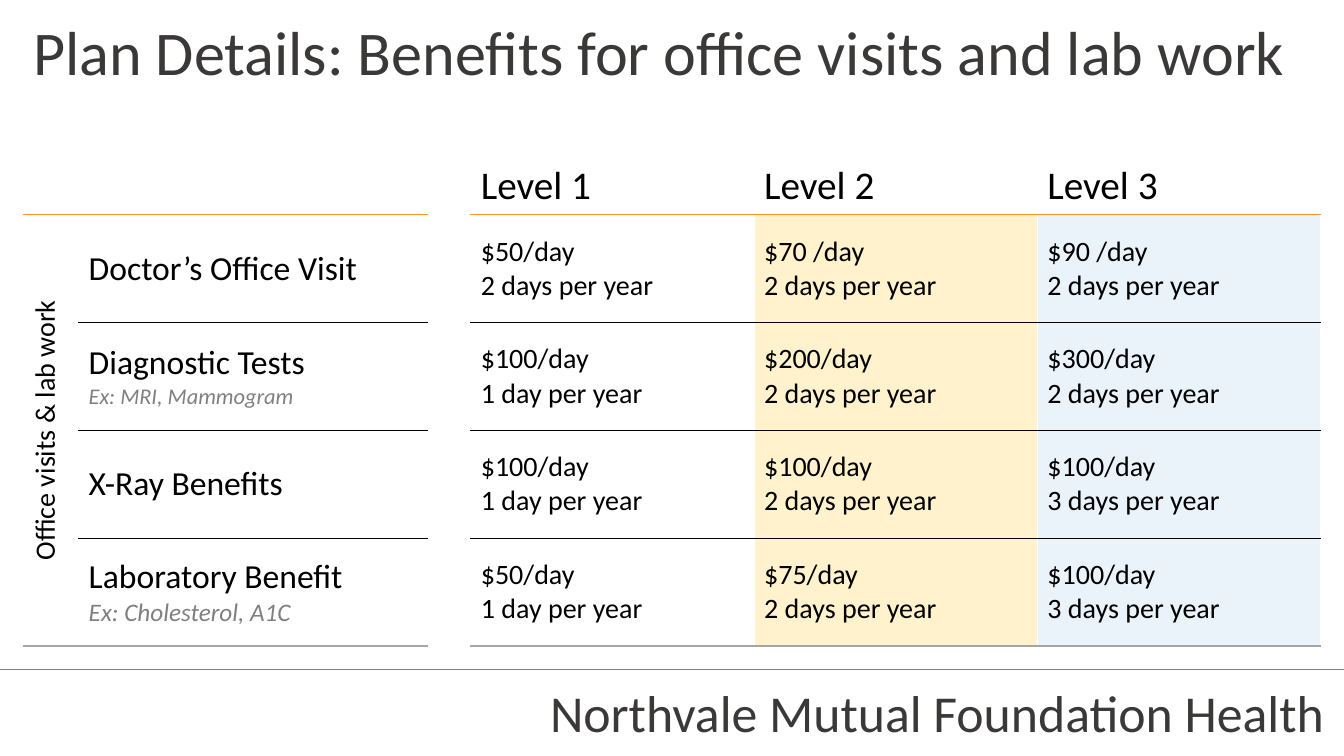
"""Build the plan details slide with the benefits table for three levels."""
import pptx
import pptx.dml.color
import pptx.enum.shapes
import pptx.enum.text
import pptx.oxml
import pptx.oxml.ns
import pptx.util

Inches = pptx.util.Inches
Pt = pptx.util.Pt
Anchor = pptx.enum.text.MSO_ANCHOR
Align = pptx.enum.text.PP_ALIGN

THEME = {
    "font": "Calibri",
    "heading": "3B3838", "ink": "000000", "muted": "808080",
    "white": "FFFFFF", "amber": "F8981D", "closing": "A6A6A6",
    "level_fills": ["FFFFFF", "FFF2CC", "EAF2FA"],
    "title": 44.4, "footer": 37, "level": 28, "benefit": 24, "body": 20,
}
WIDTH, HEIGHT = 13.33, 7.5
MARGIN = 0.23
COLUMNS = [0.55, 3.47, 0.42, 2.81, 2.81, 2.81]
ROWS = [1] + [1.07] * 4
GAP_COLUMN, FIRST_LEVEL = 2, 3

LEVELS = ["Level 1", "Level 2", "Level 3"]
BENEFITS = [
    ("Doctor’s Office Visit", None, 0,
     [("$50/day", "2 days per year"), ("$70 /day", "2 days per year"), ("$90 /day", "2 days per year")]),
    ("Diagnostic Tests", "Ex: MRI, Mammogram", 16,
     [("$100/day", "1 day per year"), ("$200/day", "2 days per year"), ("$300/day", "2 days per year")]),
    ("X-Ray Benefits", None, 0,
     [("$100/day", "1 day per year"), ("$100/day", "2 days per year"), ("$100/day", "3 days per year")]),
    ("Laboratory Benefit", "Ex: Cholesterol, A1C", 18,
     [("$50/day", "1 day per year"), ("$75/day", "2 days per year"), ("$100/day", "3 days per year")]),
]


def write(frame, lines, anchor=Anchor.MIDDLE, align=Align.LEFT):
    """Write (text, size, color, italic) lines as the paragraphs of a frame."""
    frame.word_wrap = True
    frame.vertical_anchor = anchor
    for index, (text, size, color, italic) in enumerate(lines):
        para = frame.add_paragraph() if index else frame.paragraphs[0]
        para.alignment = align
        span = para.add_run()
        span.text = text
        span.font.name = THEME["font"]
        span.font.size = Pt(size)
        span.font.italic = italic
        span.font.color.rgb = pptx.dml.color.RGBColor.from_string(color)


def add_border(cell, side, color):
    """Draw one side of a table cell as a solid one-point line."""
    cell._tc.get_or_add_tcPr().append(pptx.oxml.parse_xml(
        f'<a:ln{side} {pptx.oxml.ns.nsdecls("a")} w="12700"><a:solidFill>'
        f'<a:srgbClr val="{color}"/></a:solidFill></a:ln{side}>'))


deck = pptx.Presentation()
deck.slide_width, deck.slide_height = Inches(WIDTH), Inches(HEIGHT)
page = deck.slides.add_slide(deck.slide_layouts[6])

rule = page.shapes.add_connector(
    pptx.enum.shapes.MSO_CONNECTOR.STRAIGHT, 0, Inches(6.64), Inches(WIDTH), Inches(6.64))
rule.line.width = Pt(0.5)
rule.line.color.rgb = pptx.dml.color.RGBColor.from_string(THEME["muted"])
rule._element.spPr.append(pptx.oxml.parse_xml(f'<a:effectLst {pptx.oxml.ns.nsdecls("a")}/>'))

for text, size, left, top, width, align in [
    ("Northvale Mutual Foundation Health", THEME["footer"], 5.35, 6.44, 7.88, Align.RIGHT),
    ("Plan Details: Benefits for office visits and lab work", THEME["title"],
     MARGIN, -0.12, sum(COLUMNS), Align.LEFT),
]:
    box = page.shapes.add_textbox(Inches(left), Inches(top), Inches(width), Inches(1.25))
    write(box.text_frame, [(text, size, THEME["heading"], False)], align=align)

table = page.shapes.add_table(
    len(ROWS), len(COLUMNS), Inches(MARGIN), Inches(1.13),
    Inches(sum(COLUMNS)), Inches(sum(ROWS))).table
table.first_row = table.horz_banding = False
for column, width in zip(table.columns, COLUMNS):
    column.width = Inches(width)
for row, height in zip(table.rows, ROWS):
    row.height = Inches(height)
table.cell(1, 0).merge(table.cell(len(BENEFITS), 0))

edges = [THEME["white"], THEME["amber"]] + [THEME["ink"]] * 3 + [THEME["closing"]]
for row in range(len(ROWS)):
    for column in range(len(COLUMNS)):
        cell = table.cell(row, column)
        bottom = row + cell.span_height
        in_gap = column == GAP_COLUMN
        add_border(cell, "L", THEME["white"])
        add_border(cell, "R", THEME["white"])
        add_border(cell, "T", THEME["white"] if in_gap or cell.is_spanned else edges[row])
        hidden_edge = cell.is_spanned and bottom < len(ROWS)
        add_border(cell, "B", THEME["white"] if in_gap or hidden_edge else edges[bottom])
        tinted = row > 0 and column >= FIRST_LEVEL
        fill = THEME["level_fills"][column - FIRST_LEVEL] if tinted else THEME["white"]
        cell.fill.solid()
        cell.fill.fore_color.rgb = pptx.dml.color.RGBColor.from_string(fill)

for column, level in enumerate(LEVELS, FIRST_LEVEL):
    cell = table.cell(0, column)
    write(cell.text_frame, [(level, THEME["level"], THEME["ink"], False)])
    cell.vertical_anchor = Anchor.BOTTOM

group = table.cell(1, 0)
write(group.text_frame, [("Office visits & lab work", THEME["body"], THEME["ink"], False)],
      align=Align.CENTER)
group.vertical_anchor = Anchor.MIDDLE
group._tc.tcPr.set("vert", "vert270")

for row, (benefit, example, example_size, amounts) in enumerate(BENEFITS, 1):
    label = [(benefit, THEME["benefit"], THEME["ink"], False)]
    if example:
        label.append((example, example_size, THEME["muted"], True))
    contents = {1: label}
    for column, amount in enumerate(amounts, FIRST_LEVEL):
        contents[column] = [(line, THEME["body"], THEME["ink"], False) for line in amount]
    for column, lines in contents.items():
        cell = table.cell(row, column)
        write(cell.text_frame, lines)
        cell.vertical_anchor = Anchor.MIDDLE

deck.save("out.pptx")
